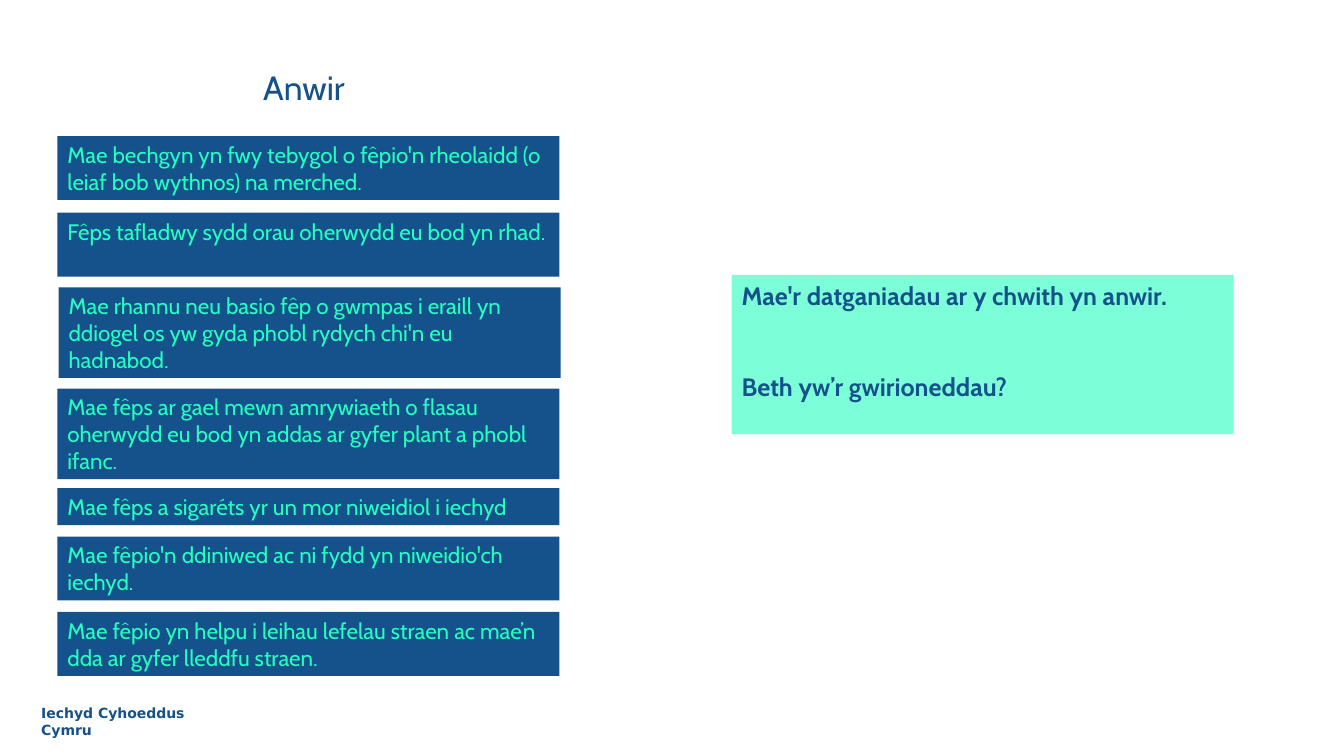
from dataclasses import dataclass

from pptx import Presentation
from pptx.dml.color import RGBColor
from pptx.enum.shapes import MSO_SHAPE
from pptx.enum.text import MSO_ANCHOR, MSO_AUTO_SIZE, PP_ALIGN
from pptx.util import Cm, Pt


@dataclass(frozen=True)
class Theme:
    navy: RGBColor = RGBColor(0x15, 0x51, 0x8B)
    green: RGBColor = RGBColor(0x24, 0xFF, 0xC0)
    mint: RGBColor = RGBColor(0x7C, 0xFF, 0xD9)
    font: str = "Cabin"
    footer_font: str = "DejaVu Sans"
    title_size: int = 24
    prompt_size: int = 18
    statement_size: int = 16
    footer_size: int = 10


THEME = Theme()
COLUMN_WIDTH = 12.65
STATEMENTS = [
    (0, 0, 2, "Mae bechgyn yn fwy tebygol o fêpio'n rheolaidd (o leiaf bob wythnos) na merched."),
    (0, 1.93, 2, "Fêps tafladwy sydd orau oherwydd eu bod yn rhad."),
    (0.03, 3.81, 3, "Mae rhannu neu basio fêp o gwmpas i eraill yn ddiogel os yw gyda phobl rydych chi'n eu hadnabod."),
    (0, 6.36, 3, "Mae fêps ar gael mewn amrywiaeth o flasau oherwydd eu bod yn addas ar gyfer plant a phobl ifanc."),
    (0, 8.87, 1, "Mae fêps a sigaréts yr un mor niweidiol i iechyd"),
    (0, 10.09, 2, "Mae fêpio'n ddiniwed ac ni fydd yn niweidio'ch iechyd."),
    (0, 11.99, 2, "Mae fêpio yn helpu i leihau lefelau straen ac mae’n dda ar gyfer lleddfu straen."),
]
PROMPTS = ["Mae'r datganiadau ar y chwith yn anwir.", "Beth yw’r gwirioneddau?"]


def write_text(shape, lines, size, color, font=THEME.font, bold=False, anchor=MSO_ANCHOR.TOP, gap=0):
    frame = shape.text_frame
    frame_format = {"word_wrap": True, "auto_size": MSO_AUTO_SIZE.NONE, "vertical_anchor": anchor}
    for name, value in frame_format.items():
        setattr(frame, name, value)
    for index, line in enumerate(lines):
        paragraph = frame.add_paragraph() if index else frame.paragraphs[0]
        paragraph.text = line
        paragraph.alignment = PP_ALIGN.LEFT
        if index:
            paragraph.space_before = Pt(gap)
        for name, value in {"name": font, "size": Pt(size), "bold": bold}.items():
            setattr(paragraph.font, name, value)
        paragraph.font.color.rgb = color


def add_panel(slide, left, top, width, height, fill):
    shape = slide.shapes.add_shape(MSO_SHAPE.RECTANGLE, Cm(left), Cm(top), Cm(width), Cm(height))
    shape.shadow.inherit = False
    shape.fill.solid()
    shape.fill.fore_color.rgb = fill
    shape.line.fill.background()
    return shape


def place_title(slide, left, top, width, height):
    title = slide.shapes.title
    box = {"left": left, "top": top, "width": width, "height": height}
    for name, value in box.items():
        setattr(title, name, Cm(value))
    write_text(title, ["Anwir"], THEME.title_size, THEME.navy, anchor=MSO_ANCHOR.BOTTOM)


def add_statements(slide, left, top, width):
    for shift, offset, line_count, text in STATEMENTS:
        height = 0.26 + 0.675 * line_count
        panel = add_panel(slide, left + shift, top + offset, width, height, THEME.navy)
        write_text(panel, [text], THEME.statement_size, THEME.green)


def add_prompt(slide, left, top, width, height):
    panel = add_panel(slide, left, top, width, height, THEME.mint)
    write_text(panel, PROMPTS, THEME.prompt_size, THEME.navy, bold=True, gap=43.5)


def add_footer(slide, left, top, width, height):
    footer = slide.shapes.add_textbox(Cm(left), Cm(top), Cm(width), Cm(height))
    write_text(footer, ["Iechyd Cyhoeddus Cymru"], THEME.footer_size, THEME.navy,
               font=THEME.footer_font, bold=True)


def main():
    presentation = Presentation()
    presentation.slide_width = Cm(33.87)
    presentation.slide_height = Cm(19.05)
    slide = presentation.slides.add_slide(presentation.slide_layouts[5])
    place_title(slide, 6.38, 1.6, 3.71, 1.24)
    add_statements(slide, 1.45, 3.43, COLUMN_WIDTH)
    add_prompt(slide, 18.44, 6.93, COLUMN_WIDTH, 4.01)
    add_footer(slide, 0.79, 17.63, 4.6, 1.09)
    presentation.save("out.pptx")


if __name__ == "__main__":
    main()
